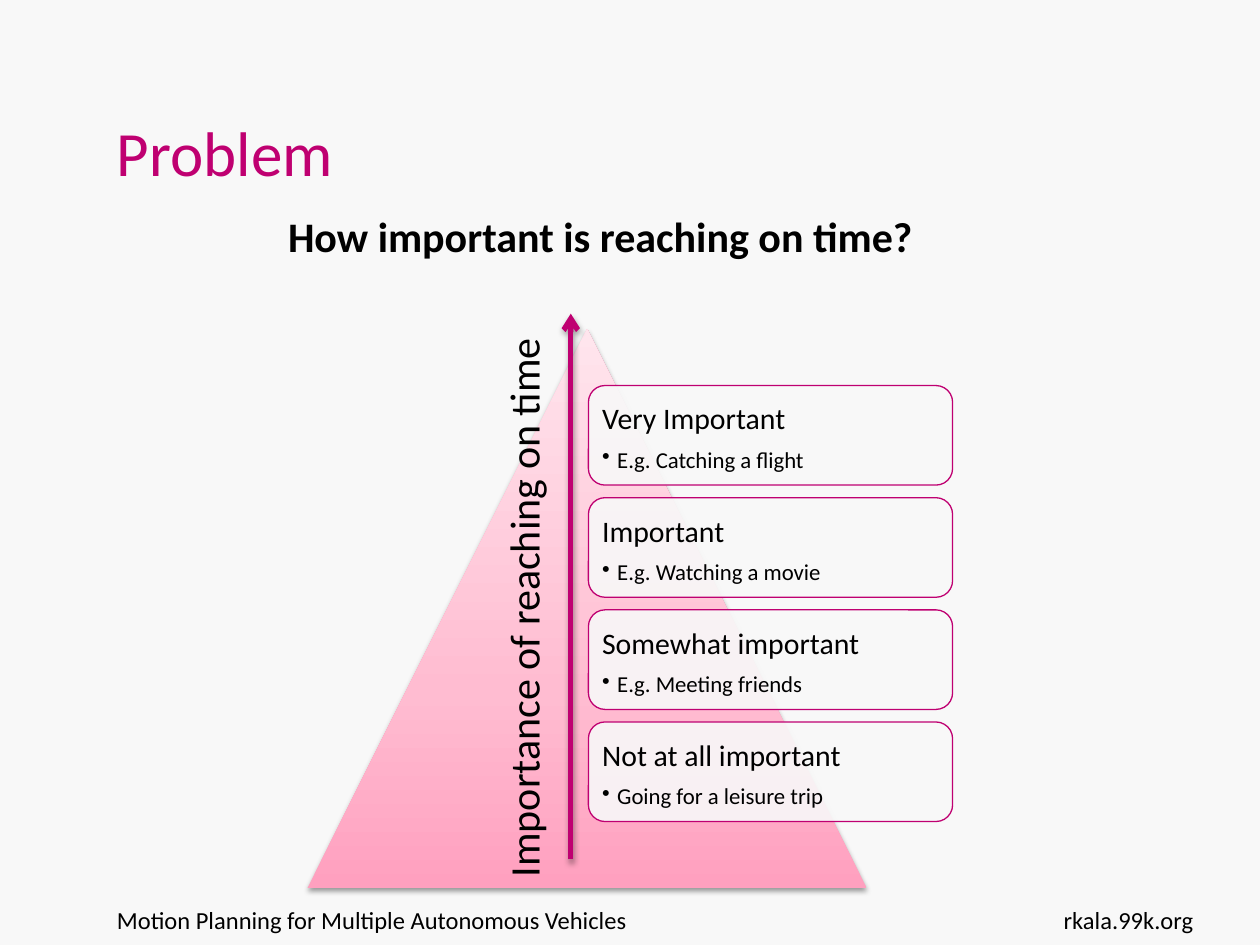
import dataclasses

import lxml.etree
import pptx
import pptx.dml.color
import pptx.enum.shapes
import pptx.enum.text
import pptx.oxml
import pptx.oxml.ns
import pptx.util

Inches = pptx.util.Inches
Pt = pptx.util.Pt
ALIGN = pptx.enum.text.PP_ALIGN
ANCHOR = pptx.enum.text.MSO_ANCHOR
SHAPE = pptx.enum.shapes.MSO_SHAPE


@dataclasses.dataclass(frozen=True)
class Theme:
    font: str = "Calibri"
    paper: str = "F8F8F8"
    ink: str = "000000"
    accent: str = "BF0071"
    gradient: tuple = ((0, "FFA0BF"), (35, "FFBCD1"), (100, "FFE5ED"))
    title: int = 36
    heading: int = 24
    card: int = 17
    detail: int = 13
    footer: int = 14


def rgb(value):
    return pptx.dml.color.RGBColor.from_string(value)


def add_xml(parent, markup):
    namespace = pptx.oxml.ns.nsdecls("a")
    tag, rest = markup.split(" ", 1)
    parent.append(pptx.oxml.parse_xml(f"{tag} {namespace} {rest}"))


class SlideBuilder:
    """Draws themed elements on the current slide."""

    def __init__(self, slide, theme):
        self.slide = slide
        self.theme = theme
        slide.background.fill.solid()
        slide.background.fill.fore_color.rgb = rgb(theme.paper)

    def style(self, paragraph, size, color=None, bold=False):
        paragraph.font.name = self.theme.font
        paragraph.font.size = Pt(size)
        paragraph.font.bold = bold
        paragraph.font.color.rgb = rgb(color or self.theme.ink)

    def shadow(self, element, distance, opacity):
        add_xml(element.spPr, f'<a:effectLst ><a:outerShdw blurRad="{Pt(3.1)}" dist="{Pt(distance)}" '
                f'dir="5400000" rotWithShape="0"><a:srgbClr val="{self.theme.ink}">'
                f'<a:alpha val="{opacity * 1000}"/></a:srgbClr></a:outerShdw></a:effectLst>')

    def text(self, words, left, top, width, height, size, color=None, bold=False,
             align=ALIGN.LEFT, anchor=ANCHOR.TOP, wrap=True, rotation=0):
        box = self.slide.shapes.add_textbox(Inches(left), Inches(top), Inches(width), Inches(height))
        box.rotation = rotation
        frame = box.text_frame
        frame.word_wrap = wrap
        frame.vertical_anchor = anchor
        paragraph = frame.paragraphs[0]
        paragraph.text = words
        paragraph.alignment = align
        self.style(paragraph, size, color, bold)

    def pyramid(self, left, top, width, height):
        shape = self.slide.shapes.add_shape(
            SHAPE.ISOSCELES_TRIANGLE, Inches(left), Inches(top), Inches(width), Inches(height))
        stops = "".join(f'<a:gs pos="{position * 1000}"><a:srgbClr val="{color}"/></a:gs>'
                        for position, color in self.theme.gradient)
        add_xml(shape.element.spPr, f'<a:gradFill rotWithShape="1"><a:gsLst>{stops}</a:gsLst>'
                '<a:lin ang="16200000" scaled="0"/></a:gradFill>')
        shape.line.fill.background()
        self.shadow(shape.element, 1.6, 38)

    def card(self, heading, detail, left, top, width, height):
        shape = self.slide.shapes.add_shape(
            SHAPE.ROUNDED_RECTANGLE, Inches(left), Inches(top), Inches(width), Inches(height))
        shape.shadow.inherit = False
        shape.fill.solid()
        shape.fill.fore_color.rgb = rgb(self.theme.paper)
        color = shape.element.spPr.find(".//" + pptx.oxml.ns.qn("a:srgbClr"))
        lxml.etree.SubElement(color, pptx.oxml.ns.qn("a:alpha"), val="90000")
        shape.line.color.rgb = rgb(self.theme.accent)
        shape.line.width = Pt(0.75)

        frame = shape.text_frame
        frame.word_wrap = True
        frame.vertical_anchor = ANCHOR.TOP
        frame.margin_left = frame.margin_right = Inches(0.07)
        frame.margin_top = frame.margin_bottom = Inches(0.11)
        title = frame.paragraphs[0]
        title.text = heading
        title.space_after = Pt(7)
        self.style(title, self.theme.card)
        example = frame.add_paragraph()
        example.text = detail
        example.level = 1
        properties = example._p.get_or_add_pPr()
        properties.set("marL", str(Inches(0.12)))
        properties.set("indent", str(-Inches(0.12)))
        add_xml(properties, '<a:buChar char="•"/>')
        self.style(example, self.theme.detail)
        for paragraph in frame.paragraphs:
            paragraph.alignment = ALIGN.LEFT
            paragraph.line_spacing = 0.9

    def arrow(self, x, start, end):
        line = self.slide.shapes.add_connector(
            pptx.enum.shapes.MSO_CONNECTOR.STRAIGHT, Inches(x), Inches(start), Inches(x), Inches(end))
        line.line.color.rgb = rgb(self.theme.accent)
        line.line.width = Pt(3)
        add_xml(line.line._get_or_add_ln(), '<a:tailEnd type="arrow"/>')
        self.shadow(line._element, 1.8, 35)


def main():
    deck = pptx.Presentation()
    deck.slide_width, deck.slide_height = Inches(10), Inches(7.5)
    theme = Theme()
    page = SlideBuilder(deck.slides.add_slide(deck.slide_layouts[6]), theme)

    page.text("Motion Planning for Multiple Autonomous Vehicles", 0.83, 7.13, 6.93, 0.52, theme.footer)
    page.text("Problem", 0.83, 0.3, 6.77, 1.25, theme.title, theme.accent,
              anchor=ANCHOR.BOTTOM, wrap=False)
    page.text("rkala.99k.org", 8.07, 7.13, 1.5, 0.52, theme.footer, align=ALIGN.RIGHT)

    page.pyramid(2.44, 2.61, 4.44, 4.44)
    cards = (
        ("Very Important", "E.g. Catching a flight"),
        ("Important", "E.g. Watching a movie"),
        ("Somewhat important", "E.g. Meeting friends"),
        ("Not at all important", "Going for a leisure trip"),
    )
    for row, (heading, detail) in enumerate(cards):
        page.card(heading, detail, 4.67, 3.06 + row * 0.89, 2.89, 0.79)

    page.text("How important is reaching on time?", 1.3, 1.62, 6.93, 0.5, theme.heading,
              bold=True, align=ALIGN.CENTER)
    page.text("Importance of reaching on time", 1.51, 4.17, 5.28, 0.5, theme.heading, rotation=270)
    page.arrow(4.53, 6.82, 2.49)
    deck.save("out.pptx")


if __name__ == "__main__":
    main()
